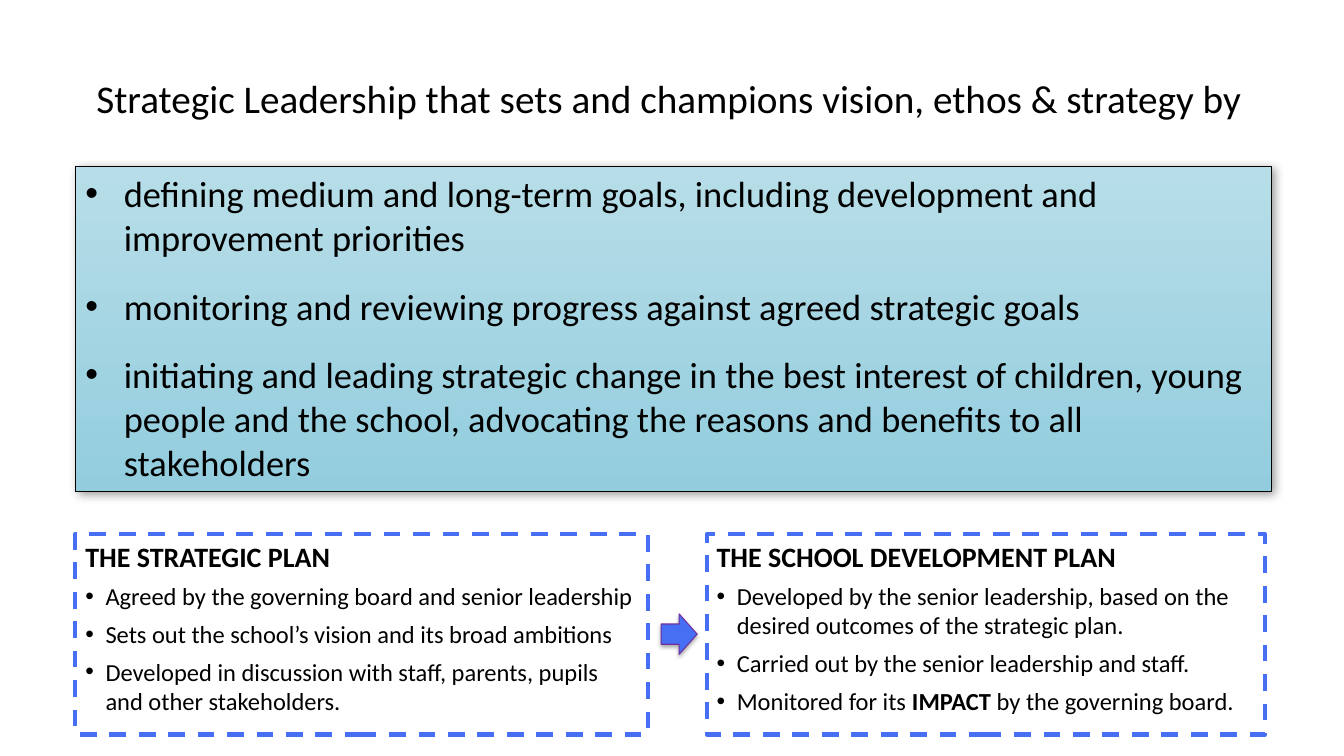
from lxml.etree import SubElement
from pptx import Presentation
from pptx.dml.color import RGBColor
from pptx.enum.dml import MSO_LINE
from pptx.enum.shapes import MSO_SHAPE
from pptx.enum.text import MSO_ANCHOR, MSO_AUTO_SIZE, PP_ALIGN
from pptx.oxml.ns import qn
from pptx.util import Cm, Pt

BLACK, WHITE, BLUE, PURPLE = "000000", "FFFFFF", "466FF4", "7030A0"
LEFT, PLAN_TOP, PLAN_HEIGHT = 1.9, 13.46, 5.05

TITLE = "Strategic Leadership that sets and champions vision, ethos & strategy by"
DUTIES = [
    "defining medium and long-term goals, including development and improvement priorities",
    "monitoring and reviewing progress against agreed strategic goals",
    "initiating and leading strategic change in the best interest of children, young people "
    "and the school, advocating the reasons and benefits to all stakeholders",
]
STRATEGIC_PLAN = [
    "Agreed by the governing board and senior leadership",
    "Sets out the school’s vision and its broad ambitions",
    "Developed in discussion with staff, parents, pupils and other stakeholders.",
]
# Asterisks enclose bold words
DEVELOPMENT_PLAN = [
    "Developed by the senior leadership, based on the desired outcomes of the strategic plan.",
    "Carried out by the senior leadership and staff.",
    "Monitored for its *IMPACT* by the governing board.",
]


def colour(value):
    return RGBColor.from_string(value)


def apply(target, settings):
    for name, value in settings.items():
        setattr(target, name, value)


def add_bullet(para, indent):
    properties = para._p.get_or_add_pPr()
    properties.set("marL", str(Cm(indent)))
    properties.set("indent", str(-Cm(indent)))
    SubElement(properties, qn("a:buFont"), typeface="Arial")
    SubElement(properties, qn("a:buChar"), char="•")


def add_para(frame, text, size, after=0, bold=False, indent=None):
    """Write into the empty first paragraph, or else into a new one."""
    first = frame.paragraphs[0]
    para = frame.add_paragraph() if first.runs else first
    apply(para, {"alignment": PP_ALIGN.LEFT, "space_after": Pt(after)})
    if indent:
        add_bullet(para, indent)
    for index, part in enumerate(text.split("*")):
        span = para.add_run()
        span.text = part
        apply(span.font, {"name": "Calibri", "size": Pt(size), "bold": bold or index % 2 == 1})
        span.font.color.rgb = colour(BLACK)


def add_shadow(shape, opacity, blur, distance, angle):
    effects = shape._element.spPr.find(qn("a:effectLst"))
    shadow = SubElement(effects, qn("a:outerShdw"), blurRad=str(Pt(blur)),
                        dist=str(Pt(distance)), dir=str(angle * 60000),
                        algn="tl", rotWithShape="0")
    tint = SubElement(shadow, qn("a:srgbClr"), val=BLACK)
    SubElement(tint, qn("a:alpha"), val=str(opacity * 1000))


def add_box(page, kind, place, line, width, fill=None):
    """Draw a shape; fill is None, one colour or a top and bottom colour."""
    box = page.shapes.add_shape(kind, *map(Cm, place))
    box.shadow.inherit = False
    box.line.color.rgb = colour(line)
    box.line.width = Pt(width)
    if fill is None:
        box.fill.background()
    elif isinstance(fill, str):
        box.fill.solid()
        box.fill.fore_color.rgb = colour(fill)
    else:
        box.fill.gradient()
        box.fill.gradient_angle = 270
        for position, (stop, value) in enumerate(zip(box.fill.gradient_stops, fill)):
            stop.position = position
            stop.color.rgb = colour(value)
    apply(box.text_frame, {"word_wrap": True, "vertical_anchor": MSO_ANCHOR.TOP})
    return box


def add_title(page):
    frame = page.shapes.add_textbox(*map(Cm, (2.18, 0.99, 29.87, 2.97))).text_frame
    apply(frame, {"word_wrap": True, "vertical_anchor": MSO_ANCHOR.MIDDLE})
    add_para(frame, TITLE, 28)


def add_duties(page):
    box = add_box(page, MSO_SHAPE.RECTANGLE, (LEFT, 4.19, 30.15, 8.2), BLACK, 0.5,
                  ("B7DEE8", "93CDDD"))
    add_shadow(box, 40, 7, 3, 45)
    box.text_frame.auto_size = MSO_AUTO_SIZE.SHAPE_TO_FIT_TEXT
    for duty in DUTIES:
        add_para(box.text_frame, duty, 26, after=18, indent=0.97)


def add_plan(page, left, width, heading, items, fill=None):
    box = add_box(page, MSO_SHAPE.RECTANGLE, (left, PLAN_TOP, width, PLAN_HEIGHT), BLUE, 3, fill)
    box.line.dash_style = MSO_LINE.DASH
    add_para(box.text_frame, heading, 20, after=6, bold=True)
    for item in items:
        add_para(box.text_frame, item, 17.5, after=6, indent=0.51)


def add_arrow(page):
    arrow = add_box(page, MSO_SHAPE.RIGHT_ARROW, (16.66, 15.47, 0.91, 1.02), PURPLE, 0.75, BLUE)
    add_shadow(arrow, 35, 3.1, 1.8, 90)


def main():
    deck = Presentation()
    apply(deck, {"slide_width": Cm(33.87), "slide_height": Cm(19.05)})
    page = deck.slides.add_slide(deck.slide_layouts[6])

    # Title and duties of the board
    add_title(page)
    add_duties(page)

    # One plan leads to the other
    add_plan(page, LEFT, 14.43, "THE STRATEGIC PLAN", STRATEGIC_PLAN)
    add_arrow(page)
    add_plan(page, 17.81, 14.07, "THE SCHOOL DEVELOPMENT PLAN", DEVELOPMENT_PLAN, WHITE)

    deck.save("out.pptx")


if __name__ == "__main__":
    main()
